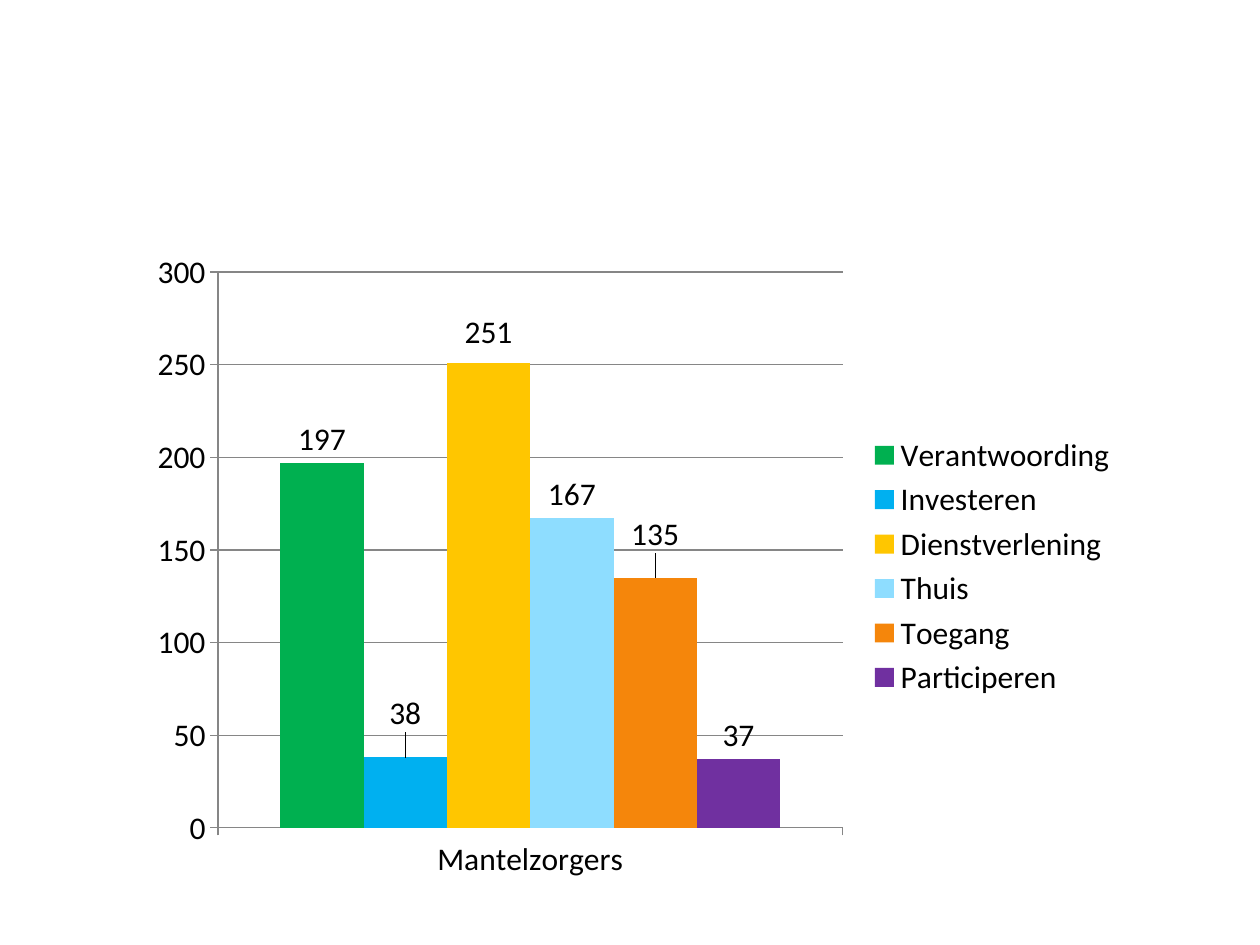
from lxml import etree
from pptx import Presentation
from pptx.chart.data import CategoryChartData
from pptx.dml.color import RGBColor
from pptx.enum import chart as ch
from pptx.oxml import parse_xml
from pptx.oxml.ns import nsdecls, qn
from pptx.util import Pt

SERIES = [
    ("Verantwoording", 197, "00B050", 0),
    ("Investeren", 38, "00B0F0", -0.03),
    ("Dienstverlening", 251, "FFC600", -0.01),
    ("Thuis ", 167, "8EDDFF", 0),
    ("Toegang", 135, "F5860B", -0.03),
    ("Participeren", 37, "7030A0", 0),
]


def rgb(value):
    return RGBColor.from_string(value)


def manual_layout(**settings):
    layout = parse_xml(f"<c:layout {nsdecls('c')}><c:manualLayout/></c:layout>")
    for name, value in settings.items():
        etree.SubElement(layout[0], qn(f"c:{name}")).set("val", str(value))
    return layout


def style_axis(axis):
    axis.major_tick_mark = ch.XL_TICK_MARK.OUTSIDE
    axis.minor_tick_mark = ch.XL_TICK_MARK.NONE
    axis.format.line.color.rgb = rgb("868686")
    axis.format.line.width = Pt(0.75)


def style_series(ser, color, label_shift):
    ser.format.fill.solid()
    ser.format.fill.fore_color.rgb = rgb(color)
    ser.invert_if_negative = False
    labels = ser.data_labels
    labels.show_value = True
    labels.position = ch.XL_LABEL_POSITION.OUTSIDE_END
    if label_shift:
        ser.points[0].data_label.position = ch.XL_LABEL_POSITION.OUTSIDE_END
        idx = ser._element.find(f".//{qn('c:dLbl')}/{qn('c:idx')}")
        idx.addnext(manual_layout(x=0, y=label_shift))


def add_caregiver_chart(s, left, top, width, height):
    data = CategoryChartData()
    data.categories = ["Mantelzorgers"]
    for name, value, _, _ in SERIES:
        data.add_series(name, [value])
    chart = s.shapes.add_chart(
        ch.XL_CHART_TYPE.COLUMN_CLUSTERED,
        Pt(left), Pt(top), Pt(width), Pt(height), data).chart
    chart.font.name = "Calibri"
    chart.font.size = Pt(18)
    chart.font.color.rgb = rgb("000000")
    chart.has_title = False
    chart.has_legend = True
    chart.legend.position = ch.XL_LEGEND_POSITION.RIGHT
    chart.legend.include_in_layout = False

    plot = chart.plots[0]
    plot.gap_width = 150
    plot.overlap = 0
    plot.vary_by_categories = False
    for ser, (_, _, color, shift) in zip(plot.series, SERIES):
        style_series(ser, color, shift)

    for axis in (chart.category_axis, chart.value_axis):
        style_axis(axis)
    axis = chart.value_axis
    axis.minimum_scale, axis.maximum_scale, axis.major_unit = 0, 300, 50
    axis.has_major_gridlines = True
    axis.major_gridlines.format.line.color.rgb = rgb("868686")
    axis.major_gridlines.format.line.width = Pt(0.75)

    area = chart._chartSpace.find(f".//{qn('c:plotArea')}")
    for old in area.findall(qn("c:layout")):
        area.remove(old)
    area.insert(0, manual_layout(
        layoutTarget="inner", xMode="edge", yMode="edge",
        x=0.08, y=0.05, w=0.63, h=0.85))


def main():
    prs = Presentation()
    prs.slide_width, prs.slide_height = Pt(720), Pt(540)
    s = prs.slides.add_slide(prs.slide_layouts[6])
    add_caregiver_chart(s, 79.2, 136.8, 566.64, 373.68)
    prs.save("out.pptx")


if __name__ == "__main__":
    main()
